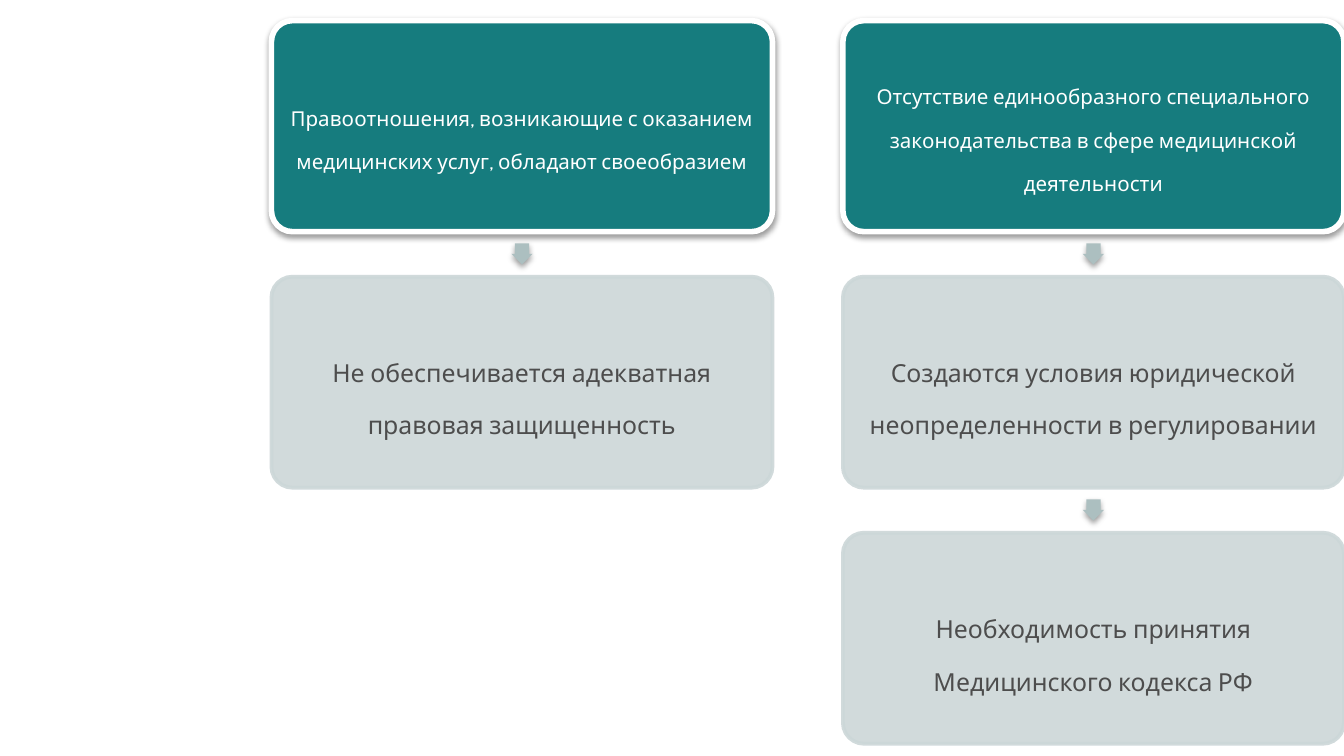
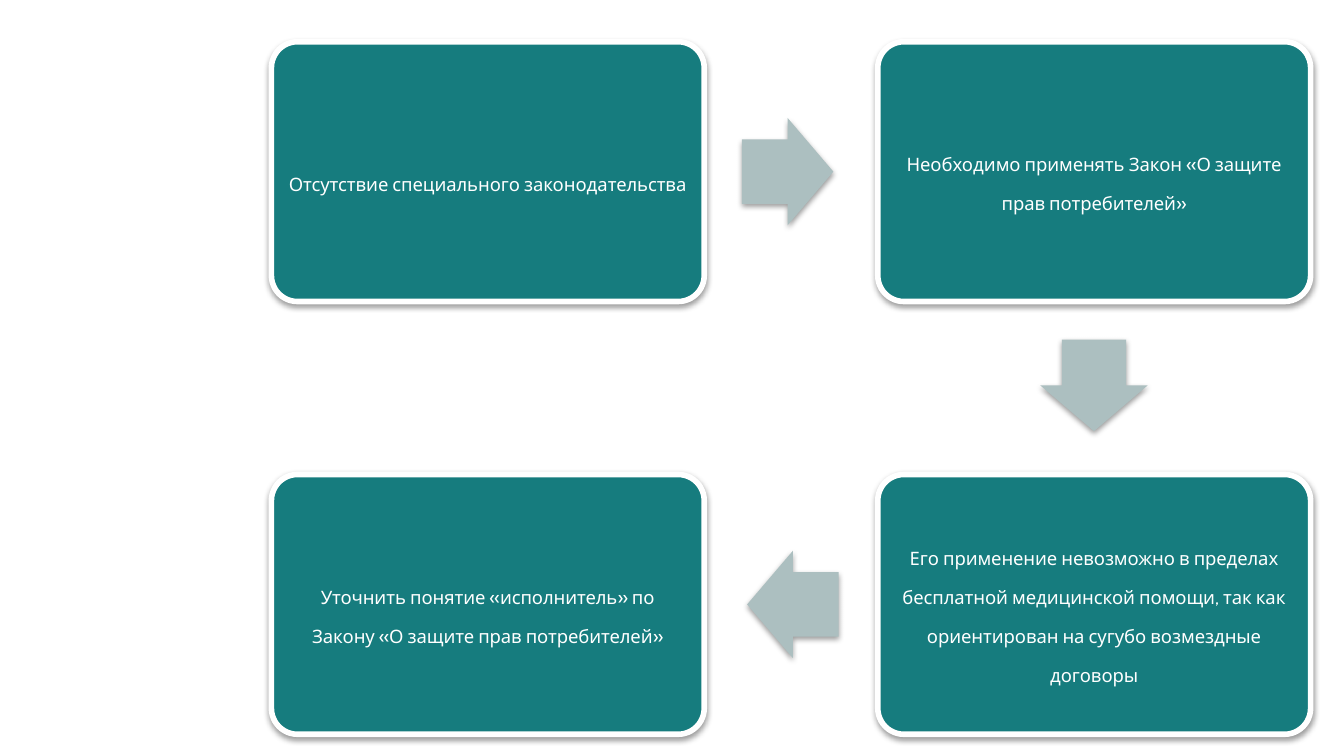
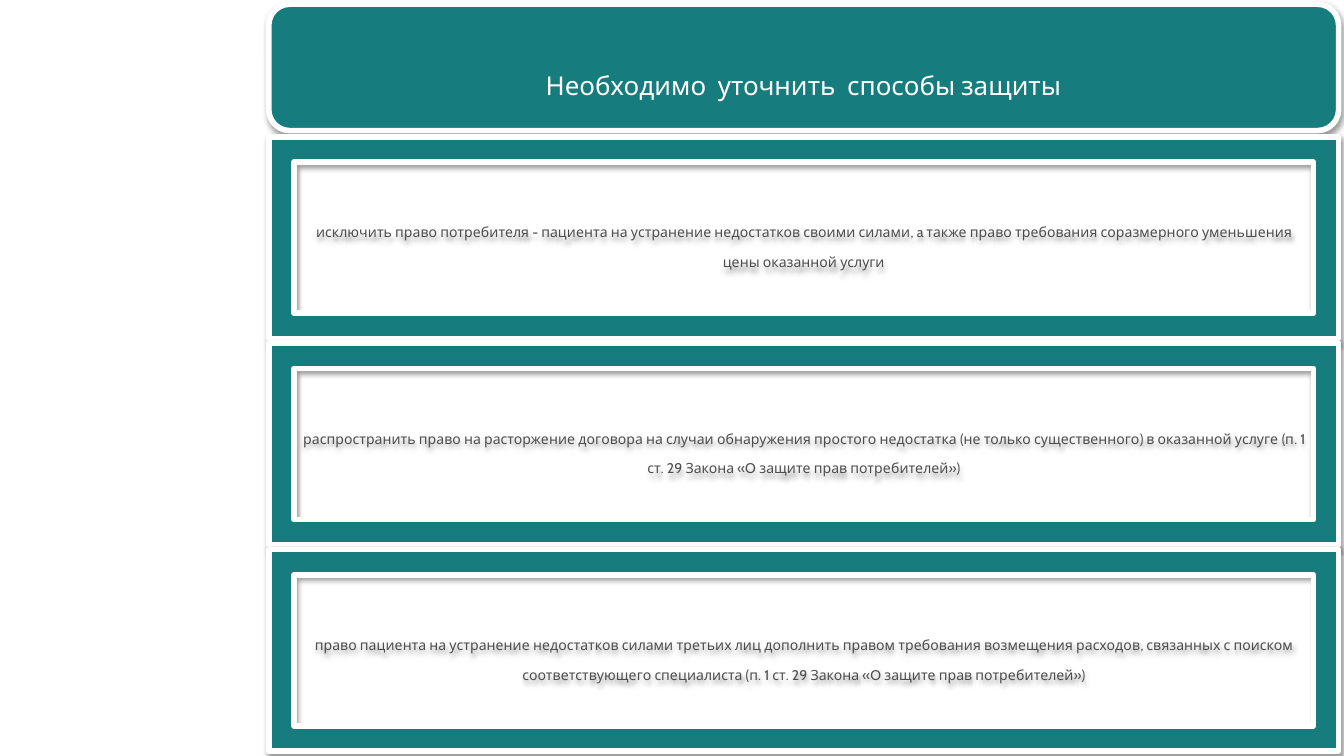
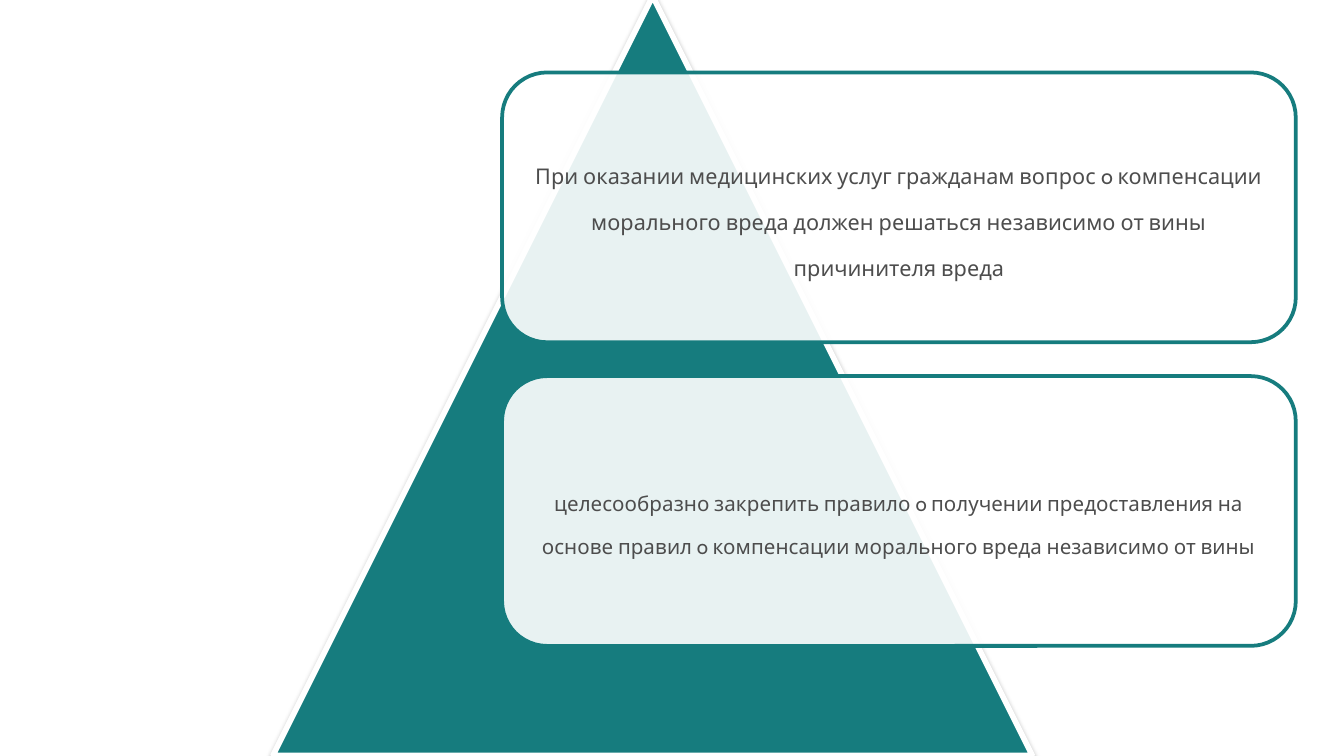
from lxml import etree
from pptx import Presentation
from pptx.dml.color import RGBColor
from pptx.enum import shapes, text
from pptx.oxml.ns import qn
from pptx.util import Cm, Pt

TEAL, PALE, ARROW = "167C7E", "CCD7D8", "ACBFC0"
WHITE, GREY = "FFFFFF", "4D4D4D"
FONT = "Cabin"
KIND = shapes.MSO_SHAPE


def draw(s, kind, box, fill, line=None, width=3, adj=(), opacity=100, shadow=True):
    """Add a preset shape; opacity acts on every use of the fill colour."""
    sp = s.shapes.add_shape(kind, *[Cm(v) for v in box])
    for i, value in enumerate(adj):
        sp.adjustments[i] = value
    sp.fill.solid()
    sp.fill.fore_color.rgb = RGBColor.from_string(fill)
    if line:
        sp.line.color.rgb = RGBColor.from_string(line)
        sp.line.width = Pt(width)
    else:
        sp.line.fill.background()
    sp.shadow.inherit = False
    spPr = sp.element.spPr
    if opacity < 100:
        for clr in spPr.iter(qn("a:srgbClr")):
            if clr.get("val") == fill:
                etree.SubElement(clr, qn("a:alpha"), val=str(opacity * 1000))
    if shadow:
        outer = etree.SubElement(spPr.find(qn("a:effectLst")), qn("a:outerShdw"),
                                 blurRad=str(Pt(3.1)), dist=str(Pt(1.6)),
                                 dir="5400000", rotWithShape="0")
        clr = etree.SubElement(outer, qn("a:srgbClr"), val="000000")
        etree.SubElement(clr, qn("a:alpha"), val="38000")
    return sp


def write(sp, words, size, color, inset):
    """Put one centred, lowered paragraph into a shape."""
    tf = sp.text_frame
    tf.word_wrap = True
    tf.vertical_anchor = text.MSO_ANCHOR.MIDDLE
    tf.margin_left = tf.margin_right = tf.margin_top = tf.margin_bottom = Cm(inset)
    p = tf.paragraphs[0]
    r = p.add_run()
    r.text = words
    r.font._element.set("baseline", "-25000")
    p.alignment = text.PP_ALIGN.CENTER
    p.line_spacing = 0.9
    p.space_after = Pt(0)
    after = p._p.pPr.find(qn("a:spcAft"))
    after.clear()
    etree.SubElement(after, qn("a:spcPct"), val="35000")
    p.font.name = FONT
    p.font.size = Pt(size)
    p.font.color.rgb = RGBColor.from_string(color)


prs = Presentation()
prs.slide_width, prs.slide_height = Cm(25.4), Cm(14.29)
blank = prs.slide_layouts[6]

# Slide 1: two chains of causes and consequences
s = prs.slides.add_slide(blank)
chains = [
    ["Правоотношения, возникающие с оказанием медицинских услуг, обладают своеобразием",
     "Не обеспечивается адекватная правовая защищенность"],
    ["Отсутствие единообразного специального законодательства в сфере медицинской деятельности",
     "Создаются условия юридической неопределенности в регулировании",
     "Необходимость принятия Медицинского кодекса РФ"],
]
box_w, box_h, arrow = 9.47, 3.99, 0.4
for col, chain in enumerate(chains):
    x = 5.13 + 10.8 * col
    for row, words in enumerate(chain):
        y = 0.39 + 4.84 * row
        box = (x, y, box_w, box_h)
        if row == 0:
            sp = draw(s, KIND.ROUNDED_RECTANGLE, box, TEAL, WHITE, adj=[0.1])
            write(sp, words, 19, WHITE, 0.08)
        else:
            sp = draw(s, KIND.ROUNDED_RECTANGLE, box, PALE, PALE, 2, [0.1], 90, False)
            write(sp, words, 23, GREY, 0.08)
        if row < len(chain) - 1:
            sp = draw(s, KIND.RIGHT_ARROW,
                      (x + (box_w - arrow) / 2, y + box_h + 0.22, arrow, arrow),
                      ARROW, adj=[0.667, 0.5])
            sp.rotation = 90

# Slide 2: four steps, clockwise
s = prs.slides.add_slide(blank)
steps = [
    (0, 0, "Отсутствие специального законодательства"),
    (1, 0, "Необходимо применять Закон «О защите прав потребителей»"),
    (1, 1, "Его применение невозможно в пределах бесплатной медицинской помощи, "
           "так как ориентирован на сугубо возмездные договоры"),
    (0, 1, "Уточнить понятие «исполнитель» по Закону «О защите прав потребителей»"),
]
for col, row, words in steps:
    sp = draw(s, KIND.ROUNDED_RECTANGLE, (5.13 + 11.46 * col, 0.79 + 8.18 * row, 8.18, 4.91),
              TEAL, WHITE, adj=[0.1])
    write(sp, words, 17, WHITE, 0.18)
for x, y, angle in [(14.02, 2.23, 0), (19.81, 6.27, 90), (14.12, 10.41, 180)]:
    sp = draw(s, KIND.RIGHT_ARROW, (x, y, 1.73, 2.03), ARROW, adj=[0.6, 0.5])
    sp.rotation = angle

# Slide 3: heading bar over three framed proposals
s = prs.slides.add_slide(blank)
sp = draw(s, KIND.ROUNDED_RECTANGLE, (5.08, 0.08, 20.22, 2.39), TEAL, WHITE)
write(sp, "Необходимо  уточнить  способы защиты", 24, WHITE, 0.25)
proposals = [
    "исключить право потребителя - пациента на устранение недостатков своими силами, "
    "a также право требования соразмерного уменьшения цены оказанной услуги",
    "распространить право на расторжение договора на случаи обнаружения простого недостатка "
    "(не только существенного) в оказанной услуге (п. 1 ст. 29 Закона «O защите прав потребителей»)",
    "право пациента на устранение недостатков силами третьих лиц дополнить правом требования "
    "возмещения расходов, связанных с поиском соответствующего специалиста "
    "(п. 1 ст. 29 Закона «O защите прав потребителей»)",
]
for i, words in enumerate(proposals):
    sp = draw(s, KIND.FRAME, (5.08, 2.59 + 3.9 * i, 20.22, 3.81), TEAL, WHITE)
    write(sp, words, 13, GREY, 0.13)

# Slide 4: pyramid with two conclusions
s = prs.slides.add_slide(blank)
draw(s, KIND.ISOSCELES_TRIANGLE, (5.16, -0.07, 14.35, 14.35), TEAL, WHITE)
conclusions = [
    (20, "При оказании медицинских услуг гражданам вопрос o компенсации морального вреда "
         "должен решаться независимо от вины причинителя вреда"),
    (19, "целесообразно закрепить правило o получении предоставления на основе правил "
         "o компенсации морального вреда независимо от вины"),
]
for i, (size, words) in enumerate(conclusions):
    sp = draw(s, KIND.ROUNDED_RECTANGLE, (9.49, 1.37 + 5.74 * i, 15, 5.1),
              WHITE, TEAL, 2, opacity=90, shadow=False)
    write(sp, words, size, GREY, 0.2)

prs.save("out.pptx")
